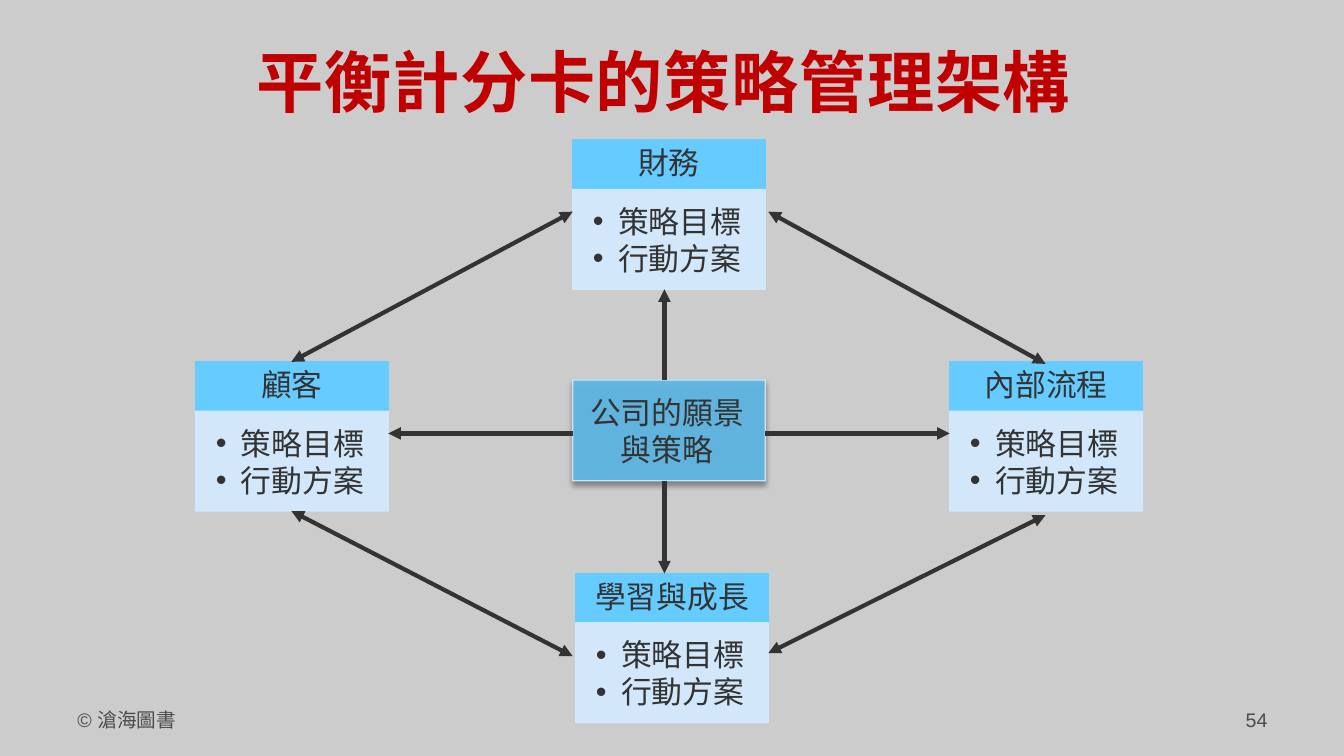
from dataclasses import dataclass

from lxml import etree
from pptx import Presentation
from pptx.dml.color import RGBColor
from pptx.enum.shapes import MSO_CONNECTOR, MSO_SHAPE
from pptx.enum.text import MSO_ANCHOR, PP_ALIGN
from pptx.oxml.ns import qn
from pptx.util import Inches, Pt

CENTER, LEFT, RIGHT = PP_ALIGN.CENTER, PP_ALIGN.LEFT, PP_ALIGN.RIGHT
TOP, MIDDLE = MSO_ANCHOR.TOP, MSO_ANCHOR.MIDDLE
RECTANGLE, STRAIGHT = MSO_SHAPE.RECTANGLE, MSO_CONNECTOR.STRAIGHT


@dataclass(frozen=True)
class Theme:
    background: str = "CCCCCC"
    title: str = "C00000"
    text: str = "333333"
    footer: str = "4C4C4C"
    header: str = "66CCFF"
    body: str = "D3ECFF"
    core: str = "5CB9E7"
    title_font: str = "Noto Sans CJK SC"
    font: str = "Arial"
    title_size: int = 48
    size: int = 22
    footer_size: int = 14
    line_width: int = 3


THEME = Theme()

# Content
TITLE = "平衡計分卡的策略管理架構"
CORE_TEXT = "公司的願景與策略"
BULLETS = ["策略目標", "行動方案"]
FOOTERS = [("© 滄海圖書", 0.67, LEFT), ("54", 9.56, RIGHT)]
PERSPECTIVES = {  # name: left, top
    "財務": (5.68, 1.39),
    "內部流程": (9.42, 3.59),
    "學習與成長": (5.71, 5.69),
    "顧客": (1.94, 3.59),
}

# Layout in inches
CARD_WIDTH, HEADER_HEIGHT, BODY_HEIGHT = 1.91, 0.49, 0.99
CARD_HEIGHT = HEADER_HEIGHT + BODY_HEIGHT
CORE_LEFT, CORE_TOP, CORE_HEIGHT = 5.68, 3.77, 1.0
CORE_RIGHT, CORE_BOTTOM = CORE_LEFT + CARD_WIDTH, CORE_TOP + CORE_HEIGHT
AXIS_X, AXIS_Y = 6.59, 4.3
RING_LEFT, RING_RIGHT = 2.89, 10.37
INNER_RIGHT = 7.62

finance_top = PERSPECTIVES["財務"][1]
process_left, process_top = PERSPECTIVES["內部流程"]
growth_top = PERSPECTIVES["學習與成長"][1]
customer_left, customer_top = PERSPECTIVES["顧客"]
SPOKES = [
    (AXIS_X, CORE_TOP, AXIS_X, finance_top + CARD_HEIGHT),
    (AXIS_X, CORE_BOTTOM, AXIS_X, growth_top),
    (CORE_RIGHT, AXIS_Y, process_left, AXIS_Y),
    (CORE_LEFT, AXIS_Y, customer_left + CARD_WIDTH, AXIS_Y),
]
RING = [
    (RING_LEFT, customer_top, CORE_LEFT, 2.1),
    (INNER_RIGHT, 2.1, RING_RIGHT, 3.61),
    (RING_LEFT, customer_top + CARD_HEIGHT, CORE_LEFT, 6.51),
    (INNER_RIGHT, 6.48, RING_RIGHT, 5.11),
]


def rgb(color):
    return RGBColor.from_string(color)


def add_xml(parent, tag, **attributes):
    return etree.SubElement(parent, qn(tag), attributes)


def style_font(font, size, color, name=THEME.font):
    font.size, font.name, font.color.rgb = Pt(size), name, rgb(color)


def set_frame(frame, margins, anchor):
    frame.word_wrap, frame.vertical_anchor = True, anchor
    (frame.margin_left, frame.margin_top,
     frame.margin_right, frame.margin_bottom) = map(Inches, margins)


def add_panel(page, place, fill, line, lines, margins, anchor=MIDDLE, alpha=None):
    panel = page.shapes.add_shape(RECTANGLE, *map(Inches, place))
    panel.fill.solid()
    panel.fill.fore_color.rgb = rgb(fill)
    panel.line.color.rgb = rgb(line)
    panel.line.width = Pt(1)
    panel.shadow.inherit = False
    if alpha:
        for color in panel.element.spPr.iter(qn("a:srgbClr")):
            add_xml(color, "a:alpha", val=str(alpha * 1000))
    frame = panel.text_frame
    set_frame(frame, margins, anchor)
    frame.text = "\n".join(lines)
    for para in frame.paragraphs:
        para.alignment = CENTER
        for span in para.runs:
            style_font(span.font, THEME.size, THEME.text)
    return panel


def add_card(page, name, left, top):
    header = add_panel(page, (left, top, CARD_WIDTH, HEADER_HEIGHT), THEME.header,
                       THEME.header, [name], (0.17, 0.1, 0.17, 0.1))
    header.text_frame.paragraphs[0].line_spacing = 0.9
    body = add_panel(page, (left, top + HEADER_HEIGHT, CARD_WIDTH, BODY_HEIGHT),
                     THEME.body, THEME.body, BULLETS, (0.13, 0.13, 0.17, 0.19),
                     TOP, alpha=90)
    for para in body.text_frame.paragraphs:
        para.level = 1
        properties = para._p.get_or_add_pPr()
        properties.set("marL", str(Inches(0.25)))
        properties.set("indent", str(-Inches(0.25)))
        add_xml(properties, "a:buFont", typeface=THEME.font)
        add_xml(properties, "a:buChar", char="•")


def add_core(page):
    core = add_panel(page, (CORE_LEFT, CORE_TOP, CARD_WIDTH, CORE_HEIGHT), THEME.core,
                     THEME.body, [CORE_TEXT], (0.13, 0.12, 0.17, 0.12), alpha=90)
    effects = core.element.spPr.find(qn("a:effectLst"))
    shadow = add_xml(effects, "a:outerShdw", blurRad=str(Pt(4)), dist=str(Pt(3)),
                     dir=str(90 * 60000), rotWithShape="0")
    add_xml(add_xml(shadow, "a:srgbClr", val="000000"), "a:alpha", val="40000")


def add_arrow(page, ends, heads):
    arrow = page.shapes.add_connector(STRAIGHT, *map(Inches, ends))
    arrow.line.color.rgb = rgb(THEME.text)
    arrow.line.width = Pt(THEME.line_width)
    for head in heads:
        add_xml(arrow.line._get_or_add_ln(), head, type="triangle")
    add_xml(arrow.element.spPr, "a:effectLst")


def add_title(page):
    title = page.shapes.title
    title.left, title.top, title.width, title.height = map(Inches, (0.67, 0.25, 12, 1.1))
    frame = title.text_frame
    frame.text = TITLE
    set_frame(frame, (0.1, 0.05, 0.27, 0.05), MIDDLE)
    para = frame.paragraphs[0]
    para.alignment = CENTER
    span = para.runs[0]
    style_font(span.font, THEME.title_size, THEME.title, THEME.title_font)
    span.font.bold = True
    properties = span._r.get_or_add_rPr()
    properties.set("spc", "50")
    add_xml(properties, "a:ea", typeface=THEME.title_font)


def add_footer(page, text, left, alignment):
    box = page.shapes.add_textbox(*map(Inches, (left, 6.97, 3.11, 0.52)))
    box.text_frame.word_wrap = True
    para = box.text_frame.paragraphs[0]
    para.text, para.alignment = text, alignment
    style_font(para.runs[0].font, THEME.footer_size, THEME.footer)


def main():
    deck = Presentation()
    deck.slide_width, deck.slide_height = Inches(13.33), Inches(7.5)
    page = deck.slides.add_slide(deck.slide_layouts[5])
    page.background.fill.solid()
    page.background.fill.fore_color.rgb = rgb(THEME.background)
    add_title(page)
    for footer in FOOTERS:
        add_footer(page, *footer)
    for name, (left, top) in PERSPECTIVES.items():
        add_card(page, name, left, top)
    add_core(page)
    for ends in SPOKES:
        add_arrow(page, ends, ["a:tailEnd"])
    for ends in RING:
        add_arrow(page, ends, ["a:headEnd", "a:tailEnd"])
    deck.save("out.pptx")


if __name__ == "__main__":
    main()
